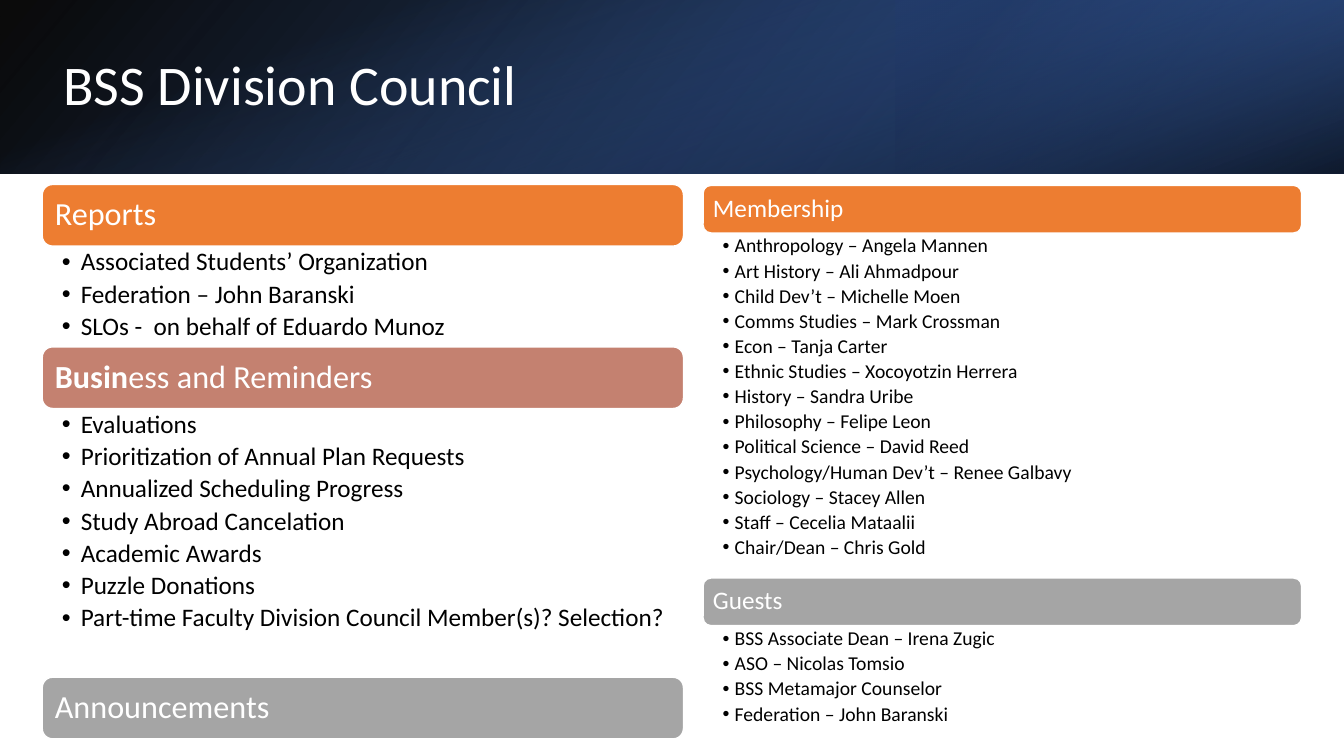
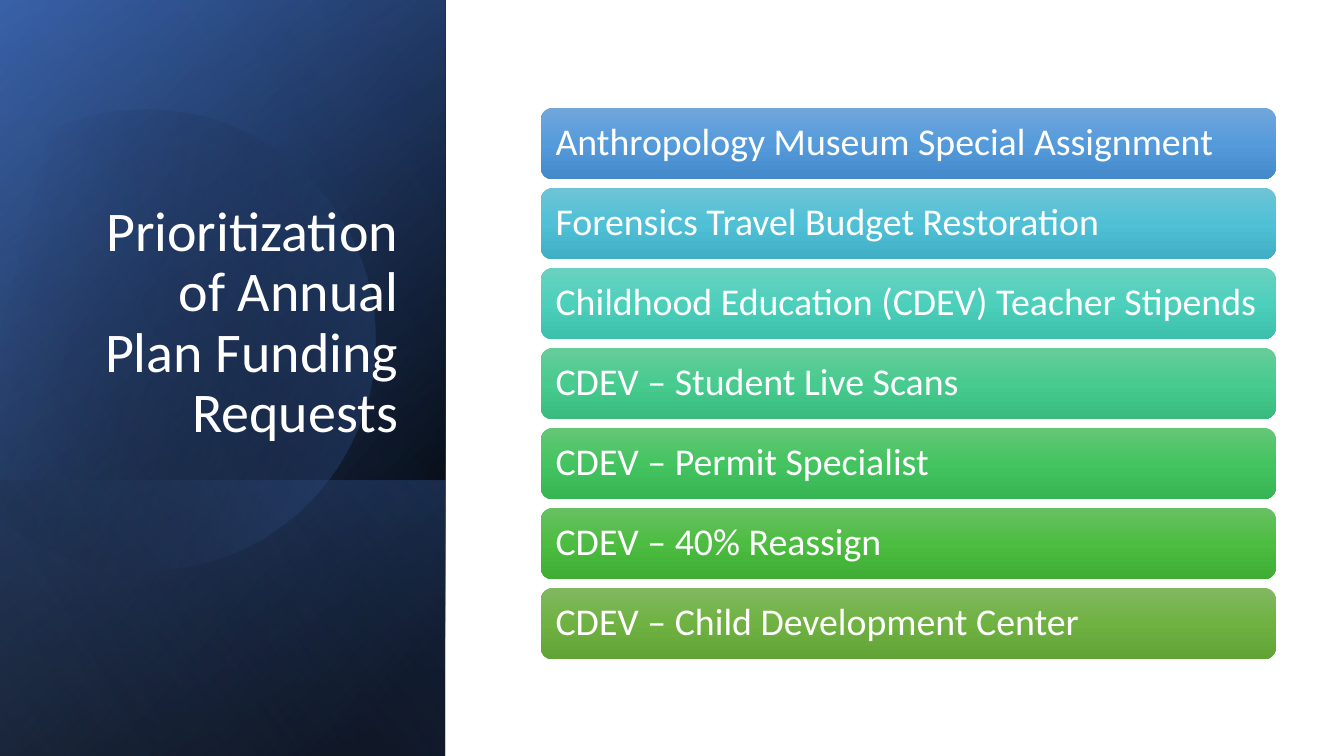
import pptx
import pptx.dml.color
import pptx.enum.shapes
import pptx.enum.text
import pptx.oxml
import pptx.oxml.ns
import pptx.util

Pt = pptx.util.Pt
RGB = pptx.dml.color.RGBColor
Shape = pptx.enum.shapes.MSO_SHAPE
Align = pptx.enum.text.PP_ALIGN
Anchor = pptx.enum.text.MSO_ANCHOR
qn = pptx.oxml.ns.qn
NS = pptx.oxml.ns.nsdecls("a")

FONT = "Calibri"
WHITE = RGB(0xFF, 0xFF, 0xFF)
BLACK = RGB(0x00, 0x00, 0x00)
BLUE = RGB(0x44, 0x72, 0xC4)
DEEP = RGB(0x2F, 0x55, 0x97)
NAVY = RGB(0x20, 0x38, 0x64)
PALE = RGB(0x8F, 0xAA, 0xDC)
ORANGE = RGB(0xED, 0x7D, 0x31)
ROSE = RGB(0xC4, 0x81, 0x70)
GRAY = RGB(0xA5, 0xA5, 0xA5)
HUES = [[RGB.from_string(code) for code in row.split()] for row in (
    "71A6DB 559BDB 448ACA",
    "6EC4D6 50C0D6 40AFC5",
    "6AD1C0 4CD0BC 3CC0AC",
    "67CC9A 47CB8E 39BB7F",
    "64C677 44C460 36B552",
    "69C062 4CBD41 3FAD34",
    "81B861 6FB242 62A336",
)]

REPORTS = [
    "Associated Students’ Organization",
    "Federation – John Baranski",
    "SLOs -  on behalf of Eduardo Munoz",
]
BUSINESS = [
    "Evaluations",
    "Prioritization of Annual Plan Requests",
    "Annualized Scheduling Progress",
    "Study Abroad Cancelation",
    "Academic Awards",
    "Puzzle Donations",
    "Part-time Faculty Division Council Member(s)? Selection?",
]
MEMBERS = [
    "Anthropology – Angela Mannen",
    "Art History – Ali Ahmadpour",
    "Child Dev’t – Michelle Moen",
    "Comms Studies – Mark Crossman",
    "Econ – Tanja Carter",
    "Ethnic Studies – Xocoyotzin Herrera",
    "History – Sandra Uribe",
    "Philosophy – Felipe Leon",
    "Political Science – David Reed",
    "Psychology/Human Dev’t – Renee Galbavy",
    "Sociology – Stacey Allen",
    "Staff – Cecelia Mataalii",
    "Chair/Dean – Chris Gold",
]
GUESTS = [
    "BSS Associate Dean – Irena Zugic",
    "ASO – Nicolas Tomsio",
    "BSS Metamajor Counselor",
    "Federation – John Baranski",
]
REQUESTS = [
    "Anthropology Museum Special Assignment",
    "Forensics Travel Budget Restoration",
    "Childhood Education (CDEV) Teacher Stipends",
    "CDEV – Student Live Scans",
    "CDEV – Permit Specialist",
    "CDEV – 40% Reassign",
    "CDEV – Child Development Center",
]


def points(*values):
    return [Pt(value) for value in values]


def blend(shape, stops, angle):
    """Fill with a gradient of (position %, colour, opacity %) stops."""
    marks = "".join(
        f'<a:gs pos="{pos * 1000}"><a:srgbClr val="{color}">'
        f'<a:alpha val="{alpha * 1000}"/></a:srgbClr></a:gs>'
        for pos, color, alpha in stops)
    grad = pptx.oxml.parse_xml(
        f'<a:gradFill {NS}><a:gsLst>{marks}</a:gsLst>'
        f'<a:lin ang="{angle * 60000}" scaled="0"/></a:gradFill>')
    shape.fill.background()
    props = shape.element.spPr
    props.replace(props.find(qn("a:noFill")), grad)


def plain(shape):
    shape.shadow.inherit = False
    shape.line.fill.background()


def panel(slide, box, stops, angle, turn=0, flip=True):
    """Place a gradient rectangle that covers box once it is turned."""
    left, top, width, height = box
    if turn == 90:
        left, top = left + (width - height) / 2, top + (height - width) / 2
        width, height = height, width
    rect = slide.shapes.add_shape(
        Shape.RECTANGLE, *points(left, top, width, height))
    plain(rect)
    blend(rect, stops, angle)
    rect.rotation = turn
    if flip:
        rect.element.spPr.find(qn("a:xfrm")).set("flipH", "1")


def disc(slide, x, y, radius):
    """Draw the tilted circle, cut by a chord on its left."""
    shape = slide.shapes.add_shape(
        Shape.CHORD, *points(x - radius, y - radius, 2 * radius, 2 * radius))
    for i, angle in enumerate((243, 149)):
        shape.adjustments[i] = angle * 0.6
    plain(shape)
    blend(shape, [(29, BLACK, 0), (100, BLUE, 43)], 30)
    shape.rotation = 343.9


def style(para, size, color, align=Align.LEFT):
    para.alignment = align
    para.line_spacing = 0.9
    para.font.name = FONT
    para.font.size = Pt(size)
    para.font.color.rgb = color


def frame(shape, anchor, pads):
    text = shape.text_frame
    text.word_wrap = True
    text.auto_size = pptx.enum.text.MSO_AUTO_SIZE.NONE
    text.vertical_anchor = anchor
    (text.margin_left, text.margin_top,
     text.margin_right, text.margin_bottom) = points(*pads)
    return text


def title(slide, words, box, anchor, align):
    shape = slide.shapes.title
    shape.left, shape.top, shape.width, shape.height = points(*box)
    text = frame(shape, anchor, (7.2, 3.6, 7.2, 3.6))
    text.text = words
    style(text.paragraphs[0], 40, WHITE, align)
    tree = shape.element.getparent()
    tree.append(shape.element)


def pill(slide, box, words, size, bold=""):
    """Place a rounded bar; bold is the heavy start of its text."""
    bar = slide.shapes.add_shape(Shape.ROUNDED_RECTANGLE, *points(*box))
    plain(bar)
    para = frame(bar, Anchor.MIDDLE, [size * 0.3] * 4).paragraphs[0]
    style(para, size, WHITE)
    if bold:
        run = para.add_run()
        run.text = bold
        run.font.bold = True
    para.add_run().text = words
    return bar


def bullets(slide, box, items, size, indent):
    area = slide.shapes.add_textbox(*points(*box))
    text = frame(area, Anchor.TOP, (14, 2.2, 11, 2.2))
    for i, item in enumerate(items):
        para = text.add_paragraph() if i else text.paragraphs[0]
        para.text = item
        para.level = 1
        props = para._p.get_or_add_pPr()
        props.set("marL", str(Pt(indent)))
        props.set("indent", str(-Pt(indent)))
        for mark in ('buFont typeface="Arial"', 'buChar char="•"'):
            props.append(pptx.oxml.parse_xml(
                f'<a:{mark} {NS}/>'))
        style(para, size, BLACK)
        para.space_after = Pt(size * 0.2)


def column(slide, box, sizes, indent, parts):
    """Stack headed lists; box height is that of one heading."""
    left, top, width, head = box
    big, small = sizes
    for bold, words, color, items, height in parts:
        bar = pill(slide, (left, top, width, head), words, big, bold)
        bar.fill.solid()
        bar.fill.fore_color.rgb = color
        bar.line.color.rgb = WHITE
        bar.line.width = Pt(1)
        top += head
        if items:
            bullets(slide, (left, top, width, height), items, small, indent)
        top += height


def council(slide):
    band = (0, 0, 960, 124)
    panel(slide, band, [(0, BLACK, 96), (100, DEEP, 100)], 140)
    panel(slide, (640, 0, 320, 124), [(19, NAVY, 68), (100, BLUE, 79)],
          320, turn=180)
    panel(slide, band, [(23, BLUE, 0), (99, BLACK, 74)], 340,
          turn=90, flip=False)
    title(slide, "BSS Division Council", (38, 28, 790, 69),
          Anchor.MIDDLE, Align.LEFT)
    column(slide, (30.2, 131.8, 458, 44), (23, 18), 13.5, [
        ("", "Reports", ORANGE, REPORTS, 72),
        ("Busin", "ess and Reminders", ROSE, BUSINESS, 192),
        ("", "Announcements", GRAY, [], 0),
    ])
    column(slide, (502.2, 132.4, 427.5, 34), (18, 14), 8.6, [
        ("", "Membership", ORANGE, MEMBERS, 246.5),
        ("", "Guests", GRAY, GUESTS, 76),
    ])


def ranking(slide):
    side = (0, 0, 318, 540)
    panel(slide, side, [(8, BLACK, 100), (100, DEEP, 100)], 50, turn=90)
    panel(slide, side, [(0, BLACK, 0), (99, BLUE, 46)], 30, turn=90)
    panel(slide, (0, 343, 318, 197), [(2, BLUE, 29), (100, BLACK, 30)],
          130, turn=90)
    disc(slide, 104, 242.7, 164.5)
    panel(slide, side, [(0, BLACK, 0), (99, PALE, 11)], 120, turn=90)
    title(slide, "Prioritization of Annual Plan Funding Requests",
          (46, 132.8, 245.5, 188.5), Anchor.BOTTOM, Align.RIGHT)
    for i, (words, hues) in enumerate(zip(REQUESTS, HUES)):
        bar = pill(slide, (386.3, 77 + i * 57.15, 525, 51), words, 27)
        blend(bar, [(pos, hue, 100) for pos, hue in zip((0, 50, 100), hues)],
              90)


def main():
    deck = pptx.Presentation()
    deck.slide_width, deck.slide_height = points(960, 540)
    for fill in (council, ranking):
        fill(deck.slides.add_slide(deck.slide_layouts[5]))
    deck.save("out.pptx")


if __name__ == "__main__":
    main()
